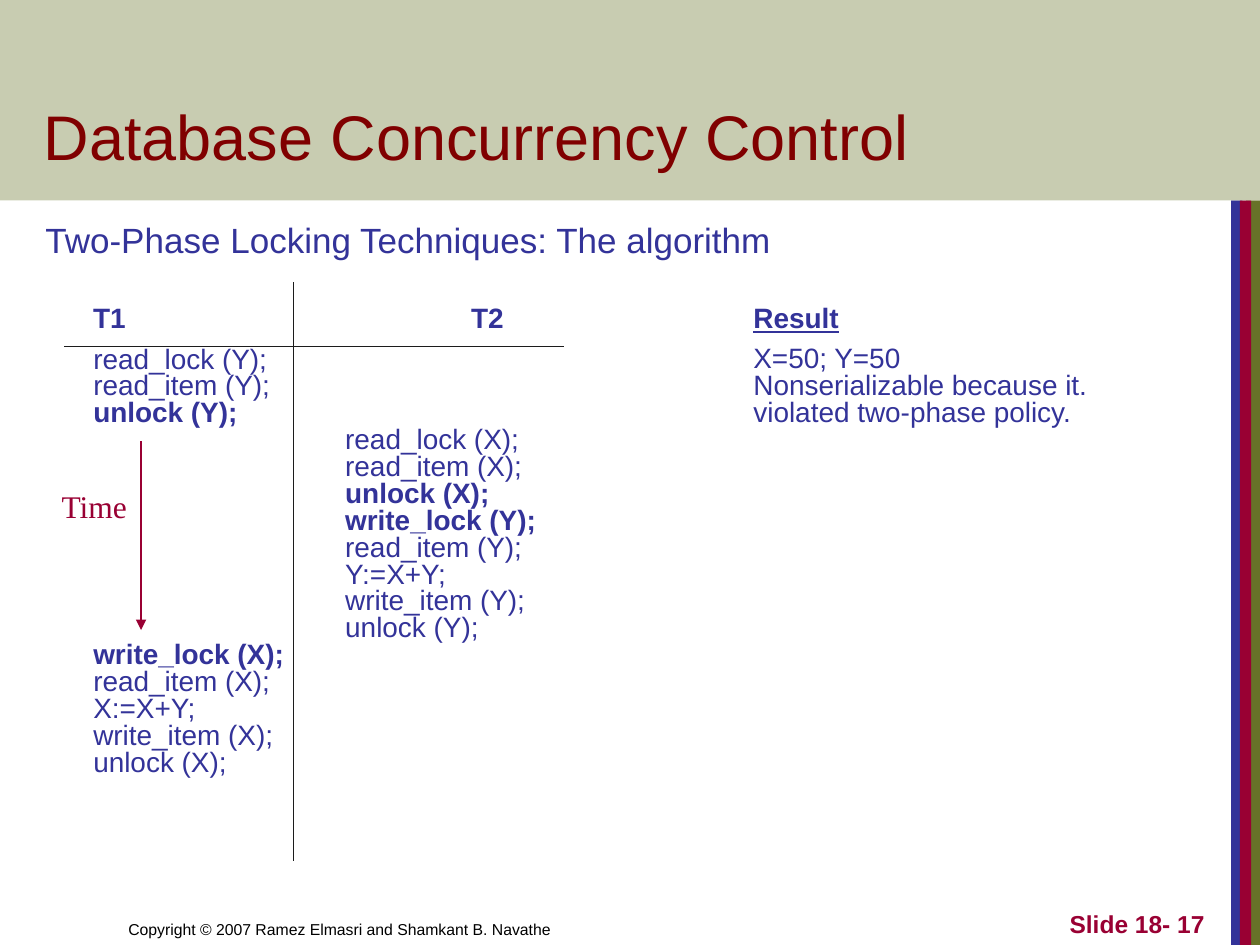
"""Builds a slide on two-phase locking with two transaction schedules."""
import pptx
import pptx.util
import pptx.dml.color
import pptx.enum.shapes
import pptx.enum.text
import lxml.etree

Inches = pptx.util.Inches
Pt = pptx.util.Pt
Align = pptx.enum.text.PP_ALIGN
Anchor = pptx.enum.text.MSO_ANCHOR
NAVY, WINE, MAROON = "333399", "990033", "800000"
PITCH = 15.36


def color(code):
    return pptx.dml.color.RGBColor.from_string(code)


def write(box, lines, size, code, font="Arial", bold=(), pitch=None, inset=0.0, anchor=Anchor.TOP):
    shape = slide.shapes.add_textbox(*map(Inches, box))
    frame = shape.text_frame
    frame.word_wrap = True
    frame.vertical_anchor = anchor
    frame.margin_left = frame.margin_right = Inches(inset)
    frame.margin_top = frame.margin_bottom = Inches(inset / 2)
    frame.text = "\n".join(lines)
    for para, line in zip(frame.paragraphs, lines):
        para.font.name = font
        para.font.size = Pt(size)
        para.font.color.rgb = color(code)
        para.font.bold = line in bold
        if pitch:
            para.line_spacing = Pt(pitch)
    return frame


deck = pptx.Presentation()
deck.slide_width, deck.slide_height = Inches(10), Inches(7.5)
slide = deck.slides.add_slide(deck.slide_layouts[6])

panels = [
    (9.89, 1.59, 0.11, 5.91, "677228"),
    (9.77, 1.59, 0.09, 5.91, NAVY),
    (9.84, 1.59, 0.09, 5.91, WINE),
    (0, 0, 10, 1.59, "C8CCB1"),
]
for *box, code in panels:
    panel = slide.shapes.add_shape(pptx.enum.shapes.MSO_SHAPE.RECTANGLE, *map(Inches, box))
    panel.shadow.inherit = False
    panel.fill.solid()
    panel.fill.fore_color.rgb = color(code)
    panel.line.fill.background()

write((0.92, 7, 4.92, 0.5), ["Copyright © 2007 Ramez Elmasri and Shamkant B. Navathe"],
      9, "000000", inset=0.1, anchor=Anchor.BOTTOM)
label = "Slide 18- 17"
number = write((7.58, 7, 2.08, 0.5), [label], 14, WINE, bold=[label], inset=0.1, anchor=Anchor.BOTTOM)
number.paragraphs[0].alignment = Align.RIGHT
write((0.25, 0.33, 8.53, 1.09), ["Database Concurrency Control"], 36, MAROON, inset=0.1, anchor=Anchor.BOTTOM)
write((0.36, 1.75, 8.9, 0.35), ["Two-Phase Locking Techniques: The algorithm"], 20, NAVY, pitch=23)

for left, head in [(0.74, "T1"), (3.74, "T2"), (5.98, "Result")]:
    frame = write((left, 2.44, 1, 0.25), [head], 16, NAVY, bold=[head], pitch=PITCH)
    frame.paragraphs[0].font.underline = head == "Result"

first = ["read_lock (Y);", "read_item (Y);", "unlock (Y);", "write_lock (X);",
         "read_item (X);", "X:=X+Y;", "write_item (X);", "unlock (X);"]
second = ["read_lock (X);", "read_item (X);", "unlock (X);", "write_lock (Y);",
          "read_item (Y);", "Y:=X+Y;", "write_item (Y);", "unlock (Y);"]
result = ["X=50; Y=50", "Nonserializable because it.", "violated two-phase policy."]
columns = [
    (0.74, 0, 1.58, 16, first, first[2:4]),
    (2.74, 3, 1.8, 8, second, second[2:4]),
    (5.98, 0, 3.3, 3, result, []),
]
frames = []
for left, row, width, rows, lines, bold in columns:
    box = (left, 2.76 + row * PITCH / 72, width, rows * PITCH / 72)
    frames.append(write(box, lines, 16, NAVY, bold=bold, pitch=PITCH))
frames[0].paragraphs[3].space_before = Pt(len(second) * PITCH)

time = write((0.39, 3.82, 0.73, 0.4), ["Time"], 18, WINE, font="Times New Roman", inset=0.1)
time.word_wrap = False

rules = [
    (1.12, 3.5, 1.12, 5, WINE, 1),
    (2.33, 2.24, 2.33, 6.83, "1C1C1C", 0.75),
    (0.51, 2.75, 4.48, 2.75, "1C1C1C", 0.75),
]
space = "{http://schemas.openxmlformats.org/drawingml/2006/main}"
for *ends, code, width in rules:
    rule = slide.shapes.add_connector(pptx.enum.shapes.MSO_CONNECTOR.STRAIGHT, *map(Inches, ends))
    rule.line.color.rgb = color(code)
    rule.line.width = Pt(width)
    if code == WINE:
        lxml.etree.SubElement(rule.line._get_or_add_ln(), space + "tailEnd", type="triangle")
    lxml.etree.SubElement(rule._element.spPr, space + "effectLst")

deck.save("out.pptx")
